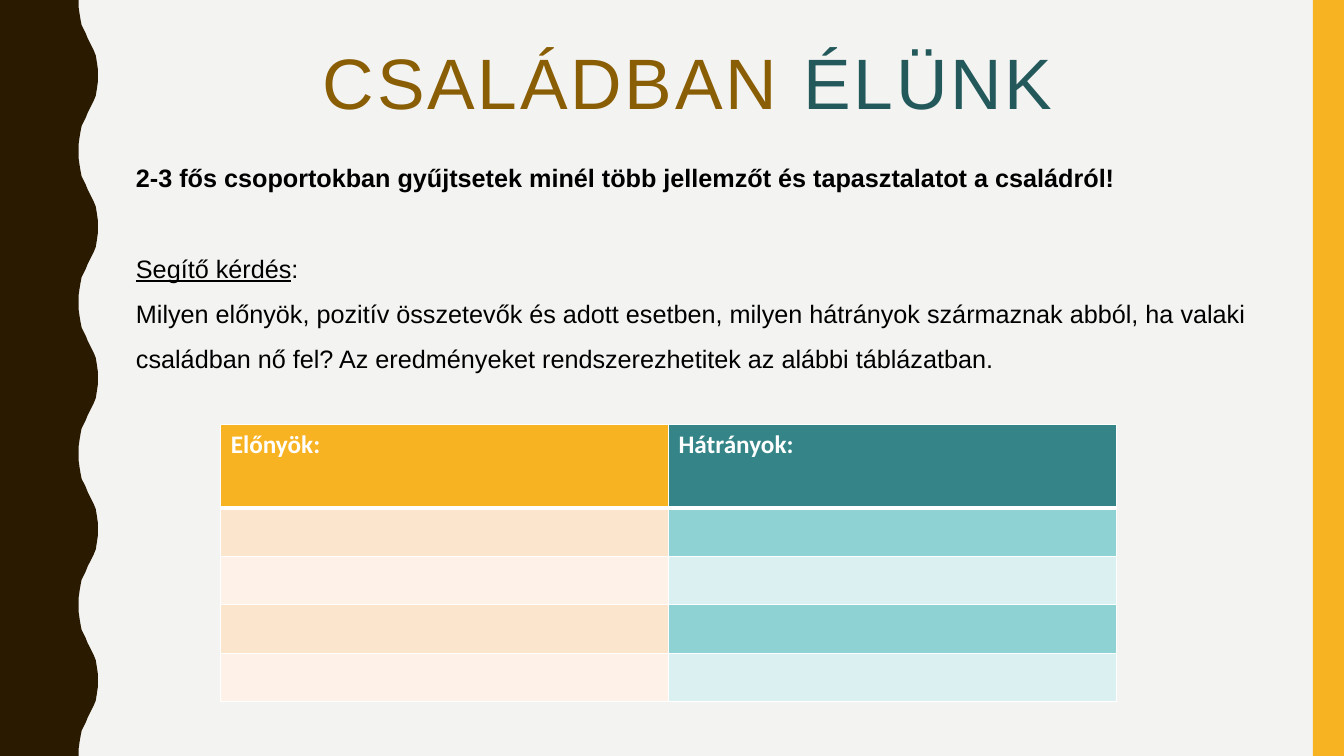
from lxml import etree
from pptx import Presentation
from pptx import util as u
from pptx.dml.color import RGBColor
from pptx.enum import shapes, text
from pptx.oxml.ns import qn

PAPER = RGBColor(0xF3, 0xF3, 0xF2)
BROWN = RGBColor(0x2A, 0x1A, 0x00)
GOLD = RGBColor(0xF8, 0xB3, 0x23)
DARK_GOLD = RGBColor(0x89, 0x5E, 0x04)
TEAL = RGBColor(0x35, 0x85, 0x88)
DARK_TEAL = RGBColor(0x23, 0x59, 0x5A)
PEACH = RGBColor(0xFC, 0xE5, 0xCD)
PALE_PEACH = RGBColor(0xFE, 0xF2, 0xE8)
AQUA = RGBColor(0x8F, 0xD2, 0xD4)
PALE_AQUA = RGBColor(0xDA, 0xF0, 0xF1)
BLACK = RGBColor(0, 0, 0)
WHITE = RGBColor(0xFF, 0xFF, 0xFF)

WIDTH, HEIGHT = 13.33, 7.5

# Half a wave from trough to crest, as (x, y); the other half mirrors it
WAVE_PERIOD = 1.5
HALF_WAVE = [(0.78, 0), (0.78, 0.07), (0.79, 0.14), (0.8, 0.2), (0.81, 0.25),
             (0.83, 0.29), (0.85, 0.33), (0.87, 0.38), (0.89, 0.42),
             (0.91, 0.46), (0.93, 0.5), (0.95, 0.55), (0.96, 0.61),
             (0.97, 0.68), (0.97, 0.75)]


class FamilySlide:
    body_font = "Arial"
    table_font = "Calibri"
    text_size = 18

    def __init__(self, presentation):
        self.slide = presentation.slides.add_slide(presentation.slide_layouts[5])
        self.slide.background.fill.solid()
        self.slide.background.fill.fore_color.rgb = PAPER

    def style(self, run, font, size, color, bold=False, underline=False):
        run.font.name = font
        run.font.size = u.Pt(size)
        run.font.color.rgb = color
        run.font.bold = bold
        run.font.underline = underline

    def paint(self, shape, color):
        shape.shadow.inherit = False
        shape.fill.solid()
        shape.fill.fore_color.rgb = color
        shape.line.fill.background()

    def bar(self, left, top, width, height, color):
        bar = self.slide.shapes.add_shape(
            shapes.MSO_SHAPE.RECTANGLE, u.Inches(left), u.Inches(top),
            u.Inches(width), u.Inches(height))
        self.paint(bar, color)

    def wavy_edge(self, color):
        wave = HALF_WAVE + [(x, WAVE_PERIOD - y) for x, y in HALF_WAVE[-2::-1]]
        points = [(x, y + index * WAVE_PERIOD)
                  for index in range(round(HEIGHT / WAVE_PERIOD)) for x, y in wave]
        outline = self.slide.shapes.build_freeform(0, 0)
        outline.add_line_segments(
            [(u.Inches(x), u.Inches(y)) for x, y in points + [(0, HEIGHT)]])
        self.paint(outline.convert_to_shape(), color)

    def title(self, left, top, width, height, parts):
        title = self.slide.shapes.title
        title.left, title.top = u.Inches(left), u.Inches(top)
        title.width, title.height = u.Inches(width), u.Inches(height)
        frame = title.text_frame
        frame.word_wrap = True
        frame.auto_size = text.MSO_AUTO_SIZE.NONE
        frame.vertical_anchor = text.MSO_ANCHOR.TOP
        paragraph = frame.paragraphs[0]
        paragraph.alignment = text.PP_ALIGN.CENTER
        paragraph.line_spacing = 0.9
        for words, color in parts:
            run = paragraph.add_run()
            run.text = words
            self.style(run, self.body_font, 51, color)
            run.font._element.set("spc", "200")

    def body(self, left, top, width, height, paragraphs):
        box = self.slide.shapes.add_textbox(
            u.Inches(left), u.Inches(top), u.Inches(width), u.Inches(height))
        frame = box.text_frame
        frame.word_wrap = True
        for index, (space_before, runs) in enumerate(paragraphs):
            paragraph = frame.add_paragraph() if index else frame.paragraphs[0]
            paragraph.line_spacing = 1.5
            paragraph.space_before = u.Pt(space_before)
            for words, bold, underline in runs:
                run = paragraph.add_run()
                run.text = words
                self.style(run, self.body_font, self.text_size, BLACK, bold, underline)

    def cell_borders(self, cell, widths):
        properties = cell._tc.get_or_add_tcPr()
        for index, (side, width) in enumerate(widths.items()):
            line = etree.Element(qn(f"a:ln{side}"), w=str(u.Pt(width)))
            fill = etree.SubElement(line, qn("a:solidFill"))
            etree.SubElement(fill, qn("a:srgbClr"), val=str(WHITE))
            properties.insert(index, line)

    def table(self, left, top, column_width, row_heights, headings, fills):
        table = self.slide.shapes.add_table(
            len(row_heights), len(headings), u.Inches(left), u.Inches(top),
            u.Inches(column_width * len(headings)), u.Inches(sum(row_heights))).table
        for column in table.columns:
            column.width = u.Inches(column_width)
        for row_index, height in enumerate(row_heights):
            table.rows[row_index].height = u.Inches(height)
            for column_index, heading in enumerate(headings):
                cell = table.cell(row_index, column_index)
                cell.fill.solid()
                cell.fill.fore_color.rgb = fills[row_index][column_index]
                self.cell_borders(cell, {"L": 1, "R": 1,
                                         "T": 3 if row_index == 1 else 1,
                                         "B": 3 if row_index == 0 else 1})
                if row_index == 0:
                    cell.text_frame.text = heading
                    run = cell.text_frame.paragraphs[0].runs[0]
                    self.style(run, self.table_font, self.text_size, WHITE, bold=True)


def main():
    presentation = Presentation()
    presentation.slide_width = u.Inches(WIDTH)
    presentation.slide_height = u.Inches(HEIGHT)
    page = FamilySlide(presentation)

    # Side decoration
    page.wavy_edge(BROWN)
    page.bar(13.02, 0, 0.31, HEIGHT, GOLD)

    # Title
    page.title(1.37, 0.42, 11.13, 1.63,
               [("CSALÁDBAN ", DARK_GOLD), ("ÉLÜNK ", DARK_TEAL)])

    # Task and guiding question
    page.body(1.25, 1.41, 11.45, 2.37, [
        (0, [("2-3 fős csoportokban gyűjtsetek minél több jellemzőt és "
              "tapasztalatot a családról!", True, False)]),
        (32.5, [("Segítő kérdés", False, True), (":", False, False)]),
        (0, [("Milyen előnyök, pozitív összetevők és adott esetben, milyen "
              "hátrányok származnak abból, ha valaki családban nő fel? Az "
              "eredményeket rendszerezhetitek az alábbi táblázatban.", False, False)]),
    ])

    # Table of advantages and drawbacks
    bands = [(PEACH, AQUA), (PALE_PEACH, PALE_AQUA)]
    page.table(2.19, 4.21, 4.44, [0.83] + [0.48] * 4,
               ["Előnyök:", "Hátrányok:"], [(GOLD, TEAL)] + bands * 2)

    presentation.save("out.pptx")


if __name__ == "__main__":
    main()
